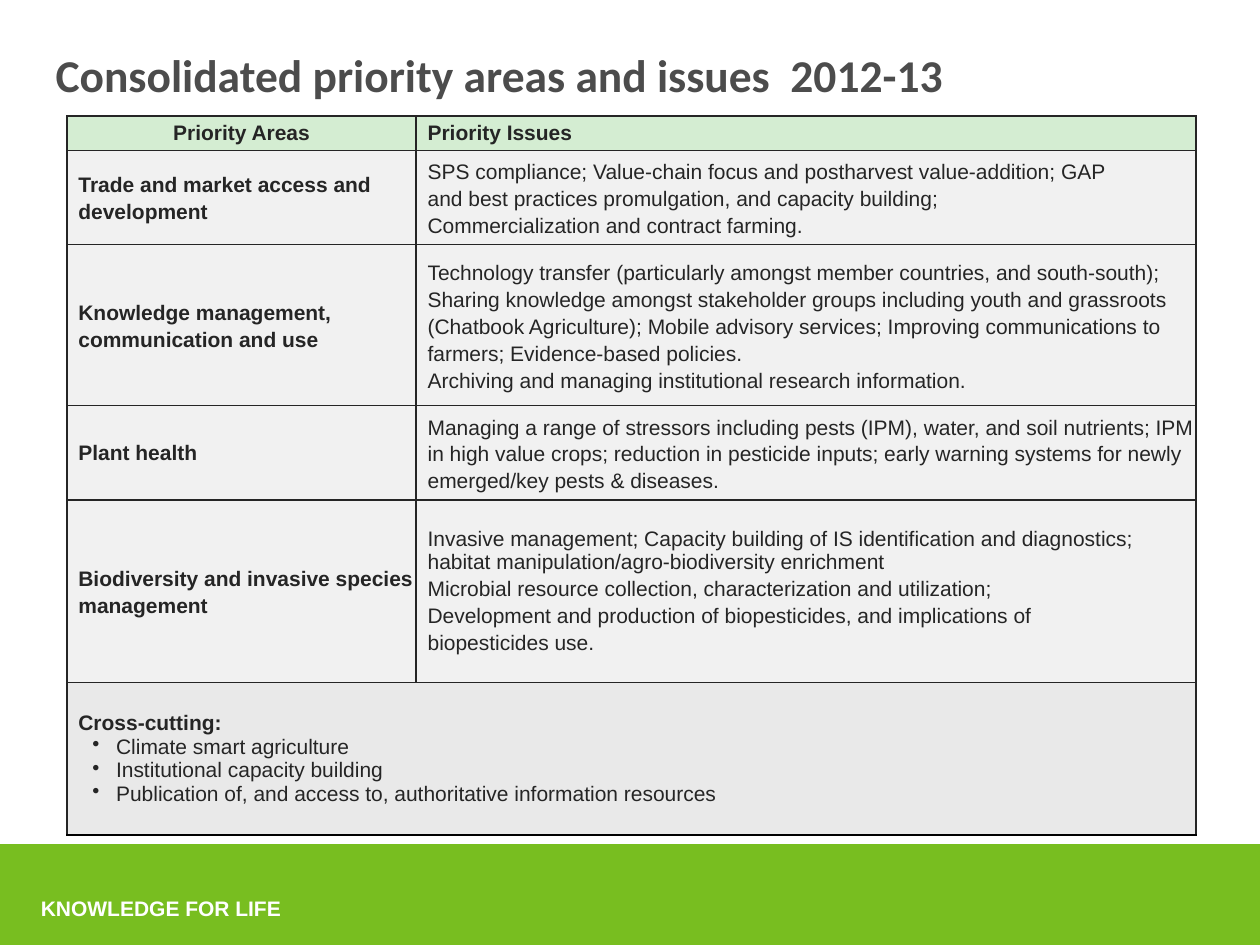
from dataclasses import dataclass

from lxml.etree import SubElement
from pptx import Presentation
from pptx.dml.color import RGBColor as Rgb
from pptx.enum.shapes import MSO_SHAPE as Shape
from pptx.enum.text import MSO_ANCHOR as Anchor, MSO_AUTO_SIZE as AutoSize, PP_ALIGN as Align
from pptx.oxml.ns import qn
from pptx.util import Cm, Pt


@dataclass(frozen=True)
class Theme:
    title_font: str = "Calibri"
    body_font: str = "Arial"
    title_size: int = 26
    body_size: int = 12
    title: str = "4C4C4C"
    ink: str = "252525"
    bottom_rule: str = "000000"
    header: str = "D4EDD2"
    row: str = "F1F1F1"
    summary: str = "E9E9E9"
    band: str = "78BE20"
    band_text: str = "FFFFFF"


@dataclass(frozen=True)
class Line:
    text: str
    spacing: float = 1.0
    before: float = 0
    bold: bool = False
    bullet: bool = False
    align: Align = Align.LEFT


class PrioritySlide:
    """Holds the theme and the current page, and draws each kind of element."""

    def __init__(self, page, theme):
        self.page = page
        self.theme = theme

    def style_runs(self, para, font, size, color, bold):
        for span in para.runs:
            span.font.name = font
            span.font.size = Pt(size)
            span.font.bold = bold
            span.font.color.rgb = Rgb.from_string(color)

    def title(self, text, left, top, width, height):
        box = self.page.shapes.title
        box.left, box.top, box.width, box.height = Cm(left), Cm(top), Cm(width), Cm(height)
        frame = box.text_frame
        frame.text = text
        frame.auto_size = AutoSize.NONE
        frame.vertical_anchor = Anchor.TOP
        frame.margin_left = frame.margin_top = frame.margin_right = frame.margin_bottom = 0
        para = frame.paragraphs[0]
        para.alignment = Align.LEFT
        para.line_spacing = Pt(37.2)
        para.space_before = Pt(0)
        self.style_runs(para, self.theme.title_font, self.theme.title_size, self.theme.title, True)

    def band(self, left, top, width, height):
        bar = self.page.shapes.add_shape(Shape.RECTANGLE, Cm(left), Cm(top), Cm(width), Cm(height))
        bar.shadow.inherit = False
        bar.fill.solid()
        bar.fill.fore_color.rgb = Rgb.from_string(self.theme.band)
        bar.line.fill.background()

    def motto(self, text, left, top, width, height):
        box = self.page.shapes.add_textbox(Cm(left), Cm(top), Cm(width), Cm(height))
        box.text_frame.text = text
        box.text_frame.word_wrap = False
        para = box.text_frame.paragraphs[0]
        para.alignment = Align.RIGHT
        para.space_after = Pt(3)
        self.style_runs(para, self.theme.body_font, self.theme.body_size, self.theme.band_text, True)

    def table(self, left, top, widths, heights):
        frame = self.page.shapes.add_table(len(heights), len(widths), Cm(left), Cm(top),
                                           Cm(sum(widths)), Cm(sum(heights)))
        grid = frame.table
        for column, width in zip(grid.columns, widths):
            column.width = Cm(width)
        for row, height in zip(grid.rows, heights):
            row.height = Cm(height)
        return grid

    def cell(self, cell, lines, fill, bottom=None):
        # Borders go in ahead of the fill
        rules = dict.fromkeys(("lnL", "lnR", "lnT", "lnB"), self.theme.ink)
        rules["lnB"] = bottom or self.theme.ink
        properties = cell._tc.get_or_add_tcPr()
        for side, color in rules.items():
            rule = SubElement(properties, qn(f"a:{side}"), w=str(Pt(1)))
            SubElement(SubElement(rule, qn("a:solidFill")), qn("a:srgbClr"), val=color)
        cell.fill.solid()
        cell.fill.fore_color.rgb = Rgb.from_string(fill)
        cell.vertical_anchor = Anchor.MIDDLE
        cell.margin_left = cell.margin_top = cell.margin_right = cell.margin_bottom = 0
        for index, line in enumerate(lines):
            frame = cell.text_frame
            para = frame.add_paragraph() if index else frame.paragraphs[0]
            self.cell_line(para, line)

    def cell_line(self, para, line):
        para.text = line.text
        para.alignment = line.align
        para.line_spacing = line.spacing
        para.space_before = Pt(line.before)
        indent = para._p.get_or_add_pPr()
        if line.bullet:
            indent.set("marL", str(Cm(0.99)))
            indent.set("indent", str(Cm(-0.48)))
            color = SubElement(indent, qn("a:buClr"))
            SubElement(color, qn("a:srgbClr"), val=self.theme.ink)
            SubElement(indent, qn("a:buChar"), char="•")
        elif line.align == Align.LEFT:
            indent.set("marL", str(Cm(0.23)))
        self.style_runs(para, self.theme.body_font, self.theme.body_size, self.theme.ink, line.bold)


HEADINGS = [Line("Priority Areas", bold=True, align=Align.CENTER),
            Line("Priority Issues", bold=True)]

PRIORITIES = [
    (Line("Trade and market access and development", 1.14, bold=True),
     [Line("SPS compliance; Value-chain focus and postharvest value-addition; GAP\v"
           "and best practices promulgation, and capacity building;\v"
           "Commercialization and contract farming.", 1.14)]),
    (Line("Knowledge management, communication and use", 1.14, bold=True),
     [Line("Technology transfer (particularly amongst member countries, and south-south); "
           "Sharing knowledge amongst stakeholder groups including youth and grassroots "
           "(Chatbook Agriculture); Mobile advisory services; Improving communications to "
           "farmers; Evidence-based policies.", 1.15),
      Line("Archiving and managing institutional research information.", before=1.9)]),
    (Line("Plant health", bold=True),
     [Line("Managing a range of stressors including pests (IPM), water, and soil nutrients; "
           "IPM in high value crops; reduction in pesticide inputs; early warning systems for "
           "newly emerged/key pests & diseases.", 1.14)]),
    (Line("Biodiversity and invasive species management", 1.14, bold=True),
     [Line("Invasive management; Capacity building of IS identification and diagnostics; "
           "habitat manipulation/agro-biodiversity enrichment"),
      Line("Microbial resource collection, characterization and utilization;\v"
           "Development and production of biopesticides, and implications of\v"
           "biopesticides use.", 1.15)]),
]

CROSS_CUTTING = [Line("Cross-cutting:", bold=True)] + [
    Line(text, bullet=True) for text in (
        "Climate smart agriculture",
        "Institutional capacity building",
        "Publication of, and access to, authoritative information resources")]


def main():
    deck = Presentation()
    deck.slide_width, deck.slide_height = Cm(25.4), Cm(19.05)
    theme = Theme()
    slide = PrioritySlide(deck.slides.add_slide(deck.slide_layouts[5]), theme)

    # Footer band and title
    slide.band(0, 17.02, 25.4, 2.03)
    slide.motto("KNOWLEDGE FOR LIFE", 0.51, 17.93, 5.41, 0.76)
    slide.title("Consolidated priority areas and issues  2012-13", 1.12, 0.74, 20.78, 1.63)

    # Table: header, one row for each priority area, merged summary
    grid = slide.table(1.35, 2.34, [7.04, 15.72], [0.69, 1.9, 3.25, 1.9, 3.68, 3.07])
    for column, heading in enumerate(HEADINGS):
        slide.cell(grid.cell(0, column), [heading], theme.header)
    for row, (area, issues) in enumerate(PRIORITIES, start=1):
        slide.cell(grid.cell(row, 0), [area], theme.row)
        slide.cell(grid.cell(row, 1), issues, theme.row)
    last = len(PRIORITIES) + 1
    grid.cell(last, 0).merge(grid.cell(last, 1))
    for column, lines in enumerate((CROSS_CUTTING, [])):
        slide.cell(grid.cell(last, column), lines, theme.summary, theme.bottom_rule)

    deck.save("out.pptx")


if __name__ == "__main__":
    main()
